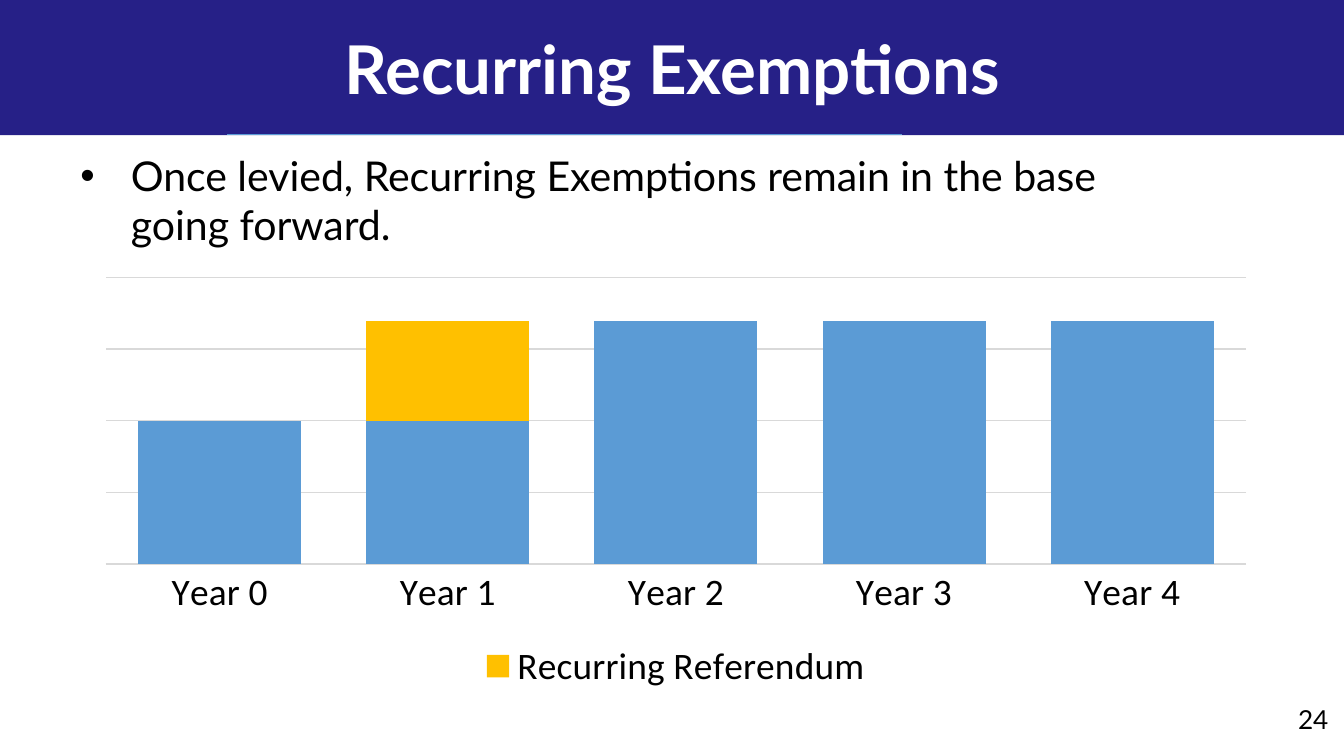
from typing import NamedTuple

from lxml.etree import SubElement
from pptx import Presentation
from pptx.chart.data import CategoryChartData
from pptx.dml.color import RGBColor
from pptx.enum.chart import XL_CHART_TYPE as ChartType
from pptx.enum.chart import XL_LEGEND_POSITION as LegendPosition
from pptx.enum.chart import XL_TICK_LABEL_POSITION as LabelPosition
from pptx.enum.chart import XL_TICK_MARK as TickMark
from pptx.enum.shapes import MSO_CONNECTOR as Connector
from pptx.enum.shapes import MSO_SHAPE as ShapeType
from pptx.enum.text import MSO_ANCHOR as Anchor
from pptx.enum.text import MSO_AUTO_SIZE as AutoSize
from pptx.enum.text import PP_ALIGN as Align
from pptx.oxml import parse_xml
from pptx.oxml.ns import nsdecls, qn
from pptx.util import Pt

WIDTH, HEIGHT, BAND_HEIGHT = 720, 405, 72.5
NAVY, BLUE, GOLD = "262087", "5B9BD5", "FFC000"
BLACK, WHITE, GRAY = "000000", "FFFFFF", "D9D9D9"


class Box(NamedTuple):
    left: float
    top: float
    width: float
    height: float

    def points(self) -> list:
        return [Pt(value) for value in self]


class Series(NamedTuple):
    name: str
    values: tuple
    color: str


CATEGORIES = [f"Year {year}" for year in range(5)]
SERIES = [
    Series("Series 1", (59, 59, 100, 100, 100), BLUE),
    Series("Recurring Referendum", (0, 41, 0, 0, 0), GOLD),
]


def rgb(color: str) -> RGBColor:
    return RGBColor.from_string(color)


def style_font(font, name: str, size: float, color: str, bold: bool = False) -> None:
    font.name, font.size, font.bold = name, Pt(size), bold
    font.color.rgb = rgb(color)


def style_line(line, color: str, width: float) -> None:
    line.color.rgb = rgb(color)
    line.width = Pt(width)


def add_text(slide, box: Box, text: str, size: float):
    shape = slide.shapes.add_textbox(*box.points())
    shape.text_frame.word_wrap = True
    shape.text_frame.text = text
    paragraph = shape.text_frame.paragraphs[0]
    style_font(paragraph.runs[0].font, "Lato", size, BLACK)
    return paragraph


def add_bullet(paragraph, indent: float) -> None:
    properties = paragraph._p.get_or_add_pPr()
    properties.set("marL", str(Pt(indent)))
    properties.set("indent", str(-Pt(indent)))
    SubElement(properties, qn("a:buFont"), typeface="Arial")
    SubElement(properties, qn("a:buChar"), char="•")


def add_title(slide, text: str) -> None:
    # Band, kept behind the title
    band = slide.shapes.add_shape(
        ShapeType.RECTANGLE, *Box(-0.5, 0, WIDTH + 0.5, BAND_HEIGHT).points())
    band.shadow.inherit = False
    band.fill.solid()
    band.fill.fore_color.rgb = rgb(NAVY)
    band.line.fill.background()
    slide.shapes._spTree.insert(2, band._element)

    title = slide.shapes.title
    title.left, title.top, title.width, title.height = Box(
        0, 0, WIDTH, BAND_HEIGHT).points()
    frame = title.text_frame
    frame.text = text
    frame.auto_size = AutoSize.NONE
    frame.vertical_anchor = Anchor.MIDDLE
    frame.paragraphs[0].alignment = Align.CENTER
    style_font(frame.paragraphs[0].runs[0].font, "Lato", 36, WHITE, True)


def add_rule(slide, left: float, right: float, top: float) -> None:
    rule = slide.shapes.add_connector(
        Connector.STRAIGHT, Pt(left), Pt(top), Pt(right), Pt(top))
    style_line(rule.line, BLUE, 0.5)
    SubElement(rule._element.spPr, qn("a:effectLst"))


def set_plot_layout(chart, fractions: Box) -> None:
    plot_area = chart._chartSpace.chart.plotArea
    for old_layout in plot_area.findall(qn("c:layout")):
        plot_area.remove(old_layout)
    sizes = "".join(f'<c:{key} val="{value}"/>' for key, value in zip("xywh", fractions))
    plot_area.insert(0, parse_xml(
        f'<c:layout {nsdecls("c")}><c:manualLayout><c:layoutTarget val="inner"/>'
        f'<c:xMode val="edge"/><c:yMode val="edge"/>{sizes}'
        '</c:manualLayout></c:layout>'))


def hide_legend_entry(legend, index: int) -> None:
    entry = parse_xml(
        f'<c:legendEntry {nsdecls("c")}><c:idx val="{index}"/>'
        '<c:delete val="1"/></c:legendEntry>')
    legend._element.find(qn("c:legendPos")).addnext(entry)


def add_levy_chart(slide, box: Box) -> None:
    data = CategoryChartData()
    data.categories = CATEGORIES
    for series in SERIES:
        data.add_series(series.name, series.values)
    chart = slide.shapes.add_chart(
        ChartType.COLUMN_STACKED, *box.points(), data).chart
    chart.has_title = False
    style_font(chart.font, "Calibri", 20, BLACK)
    set_plot_layout(chart, Box(0.02, 0.02, 0.96, 0.67))

    # Columns
    plot = chart.plots[0]
    plot.gap_width, plot.overlap = 40, 100
    plot.vary_by_categories = False
    for drawn, series in zip(plot.series, SERIES):
        drawn.format.fill.solid()
        drawn.format.fill.fore_color.rgb = rgb(series.color)

    # Axes
    years = chart.category_axis
    years.major_tick_mark = TickMark.NONE
    style_font(years.tick_labels.font, "Calibri", 20, BLACK)
    style_line(years.format.line, GRAY, 0.75)
    levy = chart.value_axis
    levy.minimum_scale, levy.maximum_scale, levy.major_unit = 0, 118, 29.5
    levy.tick_label_position = LabelPosition.NONE
    levy.major_tick_mark = TickMark.NONE
    levy.format.line.fill.background()
    style_line(levy.major_gridlines.format.line, GRAY, 0.75)
    levy.visible = False

    # Legend
    chart.has_legend = True
    chart.legend.position = LegendPosition.BOTTOM
    chart.legend.include_in_layout = False
    style_font(chart.legend.font, "Calibri", 20, BLACK)
    hide_legend_entry(chart.legend, 0)


def main() -> None:
    presentation = Presentation()
    presentation.slide_width, presentation.slide_height = Pt(WIDTH), Pt(HEIGHT)
    slide = presentation.slides.add_slide(presentation.slide_layouts[5])

    # Heading
    add_title(slide, "Recurring Exemptions")
    add_rule(slide, 121.68, 483.12, 72)

    # Body
    statement = add_text(
        slide, Box(36, 77.04, 601.2, 60.48),
        "Once levied, Recurring Exemptions remain in the base going forward.", 22)
    add_bullet(statement, 27)
    add_levy_chart(slide, Box(43.92, 144, 636.48, 229.3))

    # Page number
    add_text(slide, Box(688.32, 373.3, 31.68, 27.36), "24", 14)

    presentation.save("out.pptx")


if __name__ == "__main__":
    main()
